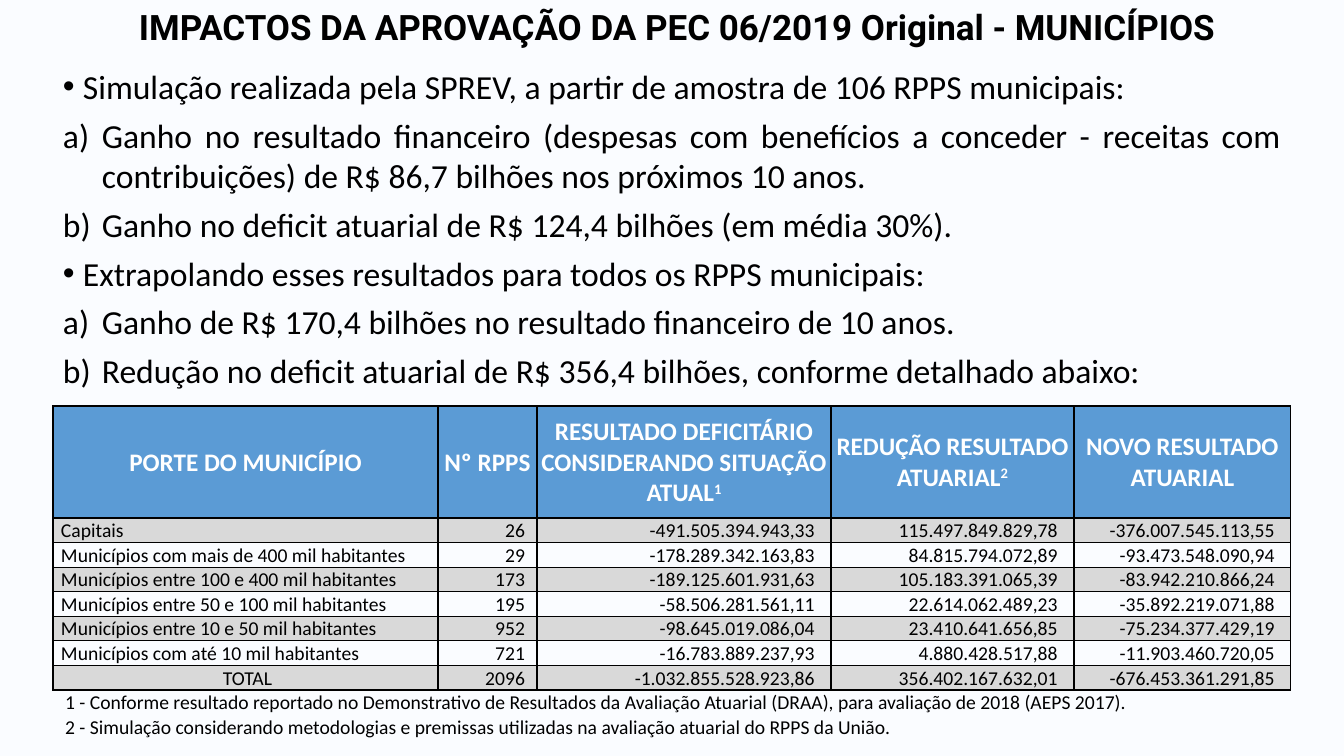
"""Build the slide on the municipal impacts of PEC 06/2019."""
import dataclasses

import lxml.etree
import pptx
import pptx.dml.color
import pptx.enum.text
import pptx.oxml.ns
import pptx.util

ALIGN = pptx.enum.text.PP_ALIGN
ANCHOR = pptx.enum.text.MSO_ANCHOR


@dataclasses.dataclass(frozen=True)
class Theme:
    back: str = "FAFCFF"
    ink: str = "000000"
    white: str = "FFFFFF"
    blue: str = "5B9BD5"
    gray: str = "D9D9D9"
    head: str = "Roboto"
    body: str = "Calibri"
    title: int = 25
    text: int = 24
    label: int = 18
    cell: int = 14


THEME = Theme()


def px(count):
    return round(count * 914400 / 100.8)


def tint(code):
    return pptx.dml.color.RGBColor.from_string(code)


def child(node, tag, **attrs):
    return lxml.etree.SubElement(node, pptx.oxml.ns.qn(tag), attrs)


def write(par, text, font=THEME.body, size=THEME.cell, color=THEME.ink,
          bold=False, align=ALIGN.LEFT, note=""):
    par.alignment = align
    lines = text.split("\n")
    for i, part in enumerate(lines + [note] * bool(note)):
        if 0 < i < len(lines):
            par.add_line_break()
        run = par.add_run()
        run.text = part
        run.font.name = font
        run.font.size = pptx.util.Pt(size)
        run.font.bold = bold
        run.font.color.rgb = tint(color)
    if note:
        run.font._element.set("baseline", "30000")


class Slide:
    def __init__(self, deck, theme):
        self.theme = theme
        self.page = deck.slides.add_slide(deck.slide_layouts[5])
        fill = self.page.background.fill
        fill.solid()
        fill.fore_color.rgb = tint(theme.back)

    def title(self, text, left, top, width, height):
        shape = self.page.shapes.title
        shape.left, shape.top = px(left), px(top)
        shape.width, shape.height = px(width), px(height)
        frame = shape.text_frame
        frame.auto_size = pptx.enum.text.MSO_AUTO_SIZE.NONE
        frame.vertical_anchor = ANCHOR.TOP
        par = frame.paragraphs[0]
        write(par, text, font=self.theme.head, size=self.theme.title,
              bold=True, align=ALIGN.CENTER)
        par._p.get_or_add_pPr().set("marL", str(px(10)))

    def points(self, items, left, top, width, height):
        box = self.page.shapes.add_textbox(px(left), px(top), px(width), px(height))
        frame = box.text_frame
        frame.word_wrap = True
        for i, (kind, text) in enumerate(items):
            par = frame.add_paragraph() if i else frame.paragraphs[0]
            par.space_before = par.space_after = pptx.util.Pt(3)
            write(par, text, size=self.theme.text, align=ALIGN.JUSTIFY)
            props = par._p.get_or_add_pPr()
            dent = px(20 if kind == "•" else 39)
            props.set("marL", str(dent))
            props.set("indent", str(-dent))
            if kind == "•":
                child(props, "a:buFont", typeface="Arial")
                child(props, "a:buChar", char=kind)
            else:
                child(props, "a:buFont", typeface="+mj-lt")
                child(props, "a:buAutoNum", type="alphaLcParenR")

    def table(self, left, top, cols, rows):
        shape = self.page.shapes.add_table(
            len(rows), len(cols), px(left), px(top), px(sum(cols)), px(sum(rows)))
        grid = shape.table
        grid.first_row = grid.horz_banding = False
        for col, width in zip(grid.columns, cols):
            col.width = px(width)
        for row, height in zip(grid.rows, rows):
            row.height = px(height)
        return grid

    def paint(self, cell, fill, sides):
        props = cell._tc.get_or_add_tcPr()
        for side in "LRTB":
            line = child(props, "a:ln" + side, w=str(pptx.util.Pt(1)))
            if side in sides:
                child(child(line, "a:solidFill"), "a:srgbClr", val=self.theme.ink)
            else:
                child(line, "a:noFill")
        if fill:
            cell.fill.solid()
            cell.fill.fore_color.rgb = tint(fill)
        else:
            cell.fill.background()

    def cell(self, cell, text, pad, anchor=ANCHOR.BOTTOM, **style):
        cell.margin_left, cell.margin_right = px(pad[0]), px(pad[1])
        cell.margin_top, cell.margin_bottom = px(1), 0
        cell.vertical_anchor = anchor
        write(cell.text_frame.paragraphs[0], text, **style)


POINTS = [
    ("•", "Simulação realizada pela SPREV, a partir de amostra de 106 RPPS municipais:"),
    ("a", "Ganho no resultado financeiro (despesas com benefícios a conceder - "
          "receitas com contribuições) de R$ 86,7 bilhões nos próximos 10 anos."),
    ("a", "Ganho no deficit atuarial de R$ 124,4 bilhões (em média 30%)."),
    ("•", "Extrapolando esses resultados para todos os RPPS municipais:"),
    ("a", "Ganho de R$ 170,4 bilhões no resultado financeiro de 10 anos."),
    ("a", "Redução no deficit atuarial de R$ 356,4 bilhões, conforme detalhado abaixo:"),
]
HEADS = [
    ("PORTE DO MUNICÍPIO", ""),
    ("Nº RPPS", ""),
    ("RESULTADO DEFICITÁRIO\nCONSIDERANDO SITUAÇÃO ATUAL", "1"),
    ("REDUÇÃO RESULTADO ATUARIAL", "2"),
    ("NOVO RESULTADO ATUARIAL", ""),
]
DATA = [
    ("Capitais", "26", "-491.505.394.943,33", "115.497.849.829,78", "-376.007.545.113,55"),
    ("Municípios com mais de 400 mil habitantes", "29",
     "-178.289.342.163,83", "84.815.794.072,89", "-93.473.548.090,94"),
    ("Municípios entre 100 e 400 mil habitantes", "173",
     "-189.125.601.931,63", "105.183.391.065,39", "-83.942.210.866,24"),
    ("Municípios entre 50 e 100 mil habitantes", "195",
     "-58.506.281.561,11", "22.614.062.489,23", "-35.892.219.071,88"),
    ("Municípios entre 10 e 50 mil habitantes", "952",
     "-98.645.019.086,04", "23.410.641.656,85", "-75.234.377.429,19"),
    ("Municípios com até 10 mil habitantes", "721",
     "-16.783.889.237,93", "4.880.428.517,88", "-11.903.460.720,05"),
    ("TOTAL", "2096", "-1.032.855.528.923,86", "356.402.167.632,01", "-676.453.361.291,85"),
]
NOTES = [
    "1 - Conforme resultado reportado no Demonstrativo de Resultados da Avaliação "
    "Atuarial (DRAA), para avaliação de 2018 (AEPS 2017).",
    "2 - Simulação considerando metodologias e premissas utilizadas na avaliação "
    "atuarial do RPPS da União.",
]
SLOTS = (0, 1, 2, 3, 5)


def main():
    deck = pptx.Presentation()
    deck.slide_width, deck.slide_height = px(1344), px(756)
    slide = Slide(deck, THEME)
    slide.title("IMPACTOS DA APROVAÇÃO DA PEC 06/2019 Original - MUNICÍPIOS",
                0, 0, 1344, 52)
    slide.points(POINTS, 53, 61, 1238, 338)

    body = len(DATA) + 1
    grid = slide.table(53, 406, [385, 99, 294, 178, 65, 217],
                       [112] + [24] * (len(DATA) + len(NOTES)))
    for r, row in enumerate(grid.rows):
        fill = THEME.blue if r == 0 else THEME.gray if r % 2 and r < body else None
        sides = "LRTB" if r < body else "T" if r == body else ""
        for cell in row.cells:
            slide.paint(cell, fill, sides)
        first, last = (3, 4) if r < body else (0, 5)
        grid.cell(r, first).merge(grid.cell(r, last))

    for c, (text, note) in zip(SLOTS, HEADS):
        slide.cell(grid.cell(0, c), text, (1, 1), ANCHOR.MIDDLE, note=note,
                   size=THEME.label, color=THEME.white, bold=True, align=ALIGN.CENTER)
    for r, values in enumerate(DATA, 1):
        for c, text in zip(SLOTS, values):
            side = ALIGN.RIGHT if c else ALIGN.CENTER if r == len(DATA) else ALIGN.LEFT
            pad = (8, 4) if c == 0 else (1, 12) if c == 1 else (1, 16)
            slide.cell(grid.cell(r, c), text, pad, align=side)
    for r, text in enumerate(NOTES, body):
        slide.cell(grid.cell(r, 0), text, (12, 1))
    deck.save("out.pptx")


if __name__ == "__main__":
    main()
